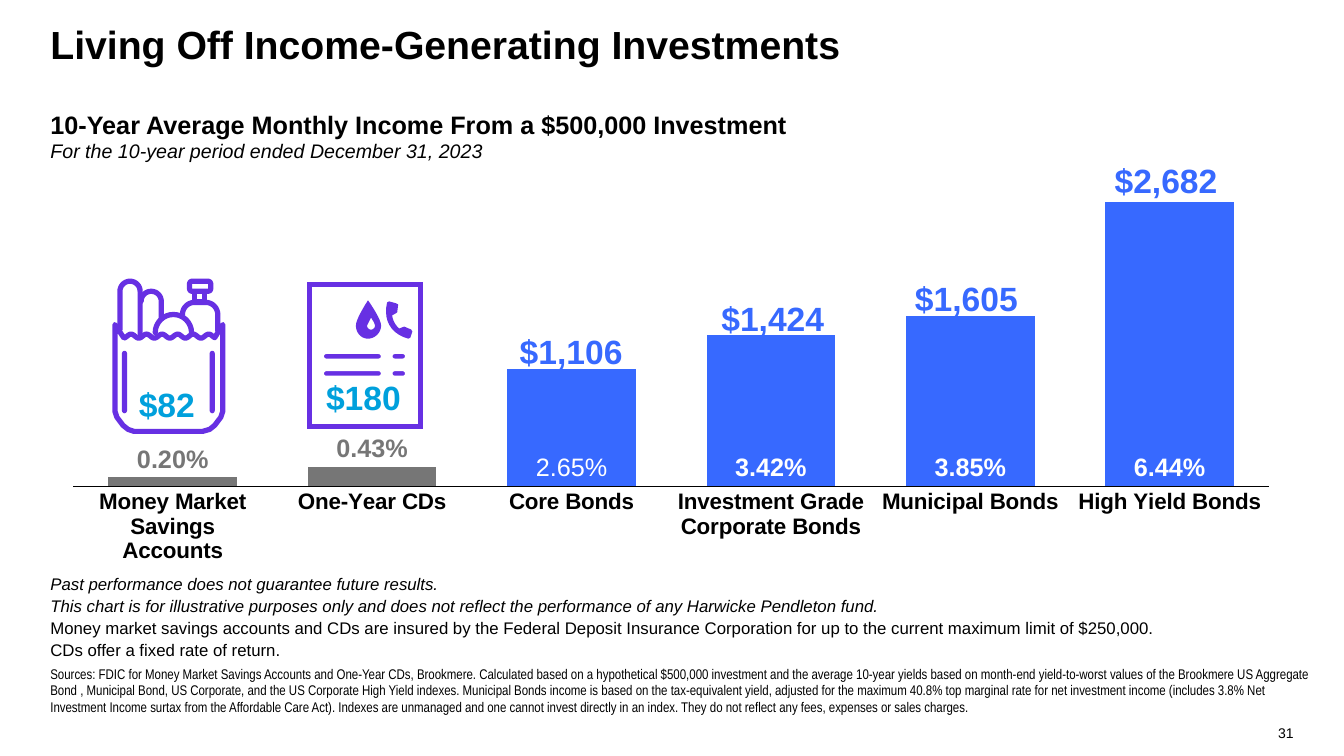
from math import cos, pi, radians, sin

from lxml import etree
from pptx import Presentation
from pptx.chart.data import CategoryChartData
from pptx.dml.color import RGBColor
from pptx.enum.chart import XL_CHART_TYPE, XL_LABEL_POSITION, XL_TICK_MARK
from pptx.enum.shapes import MSO_SHAPE
from pptx.enum.text import MSO_ANCHOR, MSO_AUTO_SIZE, PP_ALIGN
from pptx.oxml.ns import qn
from pptx.util import Inches, Pt

COLUMN = XL_CHART_TYPE.COLUMN_CLUSTERED
IN_BASE, OUT_END = XL_LABEL_POSITION.INSIDE_BASE, XL_LABEL_POSITION.OUTSIDE_END
NO_TICK = XL_TICK_MARK.NONE
RECT, ROUNDED = MSO_SHAPE.RECTANGLE, MSO_SHAPE.ROUNDED_RECTANGLE
TOP, BOTTOM = MSO_ANCHOR.TOP, MSO_ANCHOR.BOTTOM
LEFT, CENTER, RIGHT = PP_ALIGN.LEFT, PP_ALIGN.CENTER, PP_ALIGN.RIGHT


class Theme:
    font, narrow = "Arial", "Arial Narrow"
    black, white, gray = (RGBColor.from_string(c) for c in ("000000", "FFFFFF", "767676"))
    blue, cyan, purple = (RGBColor.from_string(c) for c in ("3769FF", "00A0DC", "6730E3"))
    title, income, heading, axis, period, note, small = 28, 24, 18, 16, 14, 12, 10


# Content
TITLE = "Living Off Income-Generating Investments"
HEADING = "10-Year Average Monthly Income From a $500,000 Investment"
PERIOD = "For the 10-year period ended December 31, 2023"
YIELDS = [
    ("Money Market Savings Accounts", 0.0020),
    ("One-Year CDs", 0.0043),
    ("Core Bonds", 0.0265),
    ("Investment Grade Corporate Bonds", 0.0342),
    ("Municipal Bonds", 0.0385),
    ("High Yield Bonds", 0.0644),
]
CASH_COUNT, REGULAR_LABEL = 2, 2
INCOMES = [  # text, left, top, width, colour
    ("$82", 1.17, 3.76, 0.97, Theme.cyan),
    ("$180", 3.09, 3.69, 1.03, Theme.cyan),
    ("$1,106", 5.05, 3.23, 1.23, Theme.blue),
    ("$1,424", 7.05, 2.91, 1.23, Theme.blue),
    ("$1,605", 8.97, 2.71, 1.23, Theme.blue),
    ("$2,682", 10.95, 1.54, 1.23, Theme.blue),
]
NOTES = [  # text, italic
    ("Past performance does not guarantee future results.", True),
    ("This chart is for illustrative purposes only and does not reflect the performance "
     "of any Harwicke Pendleton fund.", True),
    ("Money market savings accounts and CDs are insured by the Federal Deposit Insurance "
     "Corporation for up to the current maximum limit of $250,000.", False),
    ("CDs offer a fixed rate of return.", False),
]
SOURCES = (
    "Sources: FDIC for Money Market Savings Accounts and One-Year CDs, Brookmere. Calculated "
    "based on a hypothetical $500,000 investment and the average 10-year yields based on "
    "month-end yield-to-worst values of the Brookmere US Aggregate Bond , Municipal Bond, "
    "US Corporate, and the US Corporate High Yield indexes. Municipal Bonds income is based on "
    "the tax-equivalent yield, adjusted for the maximum 40.8% top marginal rate for net "
    "investment income (includes 3.8% Net Investment Income surtax from the Affordable Care "
    "Act). Indexes are unmanaged and one cannot invest directly in an index. They do not "
    "reflect any fees, expenses or sales charges."
)
PAGE = "31"


def style(font, size, color=Theme.black, bold=False, italic=False, name=Theme.font):
    font.name, font.size, font.bold, font.italic = name, Pt(size), bold, italic
    font.color.rgb = color


def write(shape, lines, anchor=TOP, align=LEFT, after=0, inset=0, wrap=True):
    """Each line is a text and the keywords of its font style."""
    tf = shape.text_frame
    tf.word_wrap, tf.vertical_anchor, tf.auto_size = wrap, anchor, MSO_AUTO_SIZE.NONE
    tf.margin_left = tf.margin_right = Inches(inset)
    tf.margin_top = tf.margin_bottom = Inches(inset / 2)
    for i, (text, look) in enumerate(lines):
        p = tf.paragraphs[0] if i == 0 else tf.add_paragraph()
        p.alignment, p.space_after = align, Pt(after)
        r = p.add_run()
        r.text = text
        style(r.font, **look)


def box(x, y, w, h, lines, **layout):
    tb = s.shapes.add_textbox(Inches(x), Inches(y), Inches(w), Inches(h))
    write(tb, lines, **layout)


def arc(cx, cy, radius, start, end, steps=16):
    angles = [radians(start + (end - start) * i / steps) for i in range(steps + 1)]
    return [(cx + radius * cos(a), cy - radius * sin(a)) for a in angles]


def curve(a, b, c, d, steps=10):
    ts = [i / steps for i in range(steps + 1)]
    return [tuple((1 - t) ** 3 * a[k] + 3 * (1 - t) ** 2 * t * b[k]
                  + 3 * (1 - t) * t ** 2 * c[k] + t ** 3 * d[k] for k in (0, 1)) for t in ts]


def outline(sp, width):
    sp.shadow.inherit = False
    sp.fill.background()
    sp.line.color.rgb, sp.line.width = Theme.purple, Pt(width)
    ln = sp._element.spPr.find(qn("a:ln"))
    ln.set("cap", "rnd")
    etree.SubElement(ln, qn("a:round"))


def solid(sp, edge=0):
    sp.shadow.inherit = False
    sp.fill.solid()
    sp.fill.fore_color.rgb = Theme.purple
    if edge:
        sp.line.color.rgb, sp.line.width = Theme.white, Pt(edge)
    else:
        sp.line.fill.background()


def freeform(group, *contours, close=True):
    contours = [[(Inches(x), Inches(y)) for x, y in points] for points in contours]
    fb = group.shapes.build_freeform(*contours[0][0])
    for i, points in enumerate(contours):
        if i:
            fb.move_to(*points[0])
        fb.add_line_segments(points[1:], close=close)
    return fb.convert_to_shape()


def preset(group, kind, x, y, w, h, corner=0.5):
    sp = group.shapes.add_shape(kind, Inches(x), Inches(y), Inches(w), Inches(h))
    if kind == ROUNDED:
        sp.adjustments[0] = corner
    return sp


prs = Presentation()
prs.slide_width, prs.slide_height = Inches(13.33), Inches(7.5)
s = prs.slides.add_slide(prs.slide_layouts[5])

# Title and heading
title = s.shapes.title
title.left, title.top, title.width, title.height = map(Inches, (0.5, 0.2, 9.5, 0.85))
write(title, [(TITLE, dict(size=Theme.title, bold=True))])
box(0.5, 1.08, 9.93, 0.74, [(HEADING, dict(size=Theme.heading, bold=True)),
                            (PERIOD, dict(size=Theme.period, italic=True))])

# Yield chart
data = CategoryChartData(number_format="0.00%")
data.categories = [name for name, _ in YIELDS]
data.add_series("Series 1", [value for _, value in YIELDS])
chart = s.shapes.add_chart(COLUMN, *map(Inches, (0.53, 1.57, 12.17, 4.01)), data).chart
chart.has_legend = chart.has_title = False
style(chart.font, Theme.small)
cat, val = chart.category_axis, chart.value_axis
cat.major_tick_mark = cat.minor_tick_mark = NO_TICK
cat.format.line.color.rgb, cat.format.line.width = Theme.black, Pt(0.75)
style(cat.tick_labels.font, Theme.axis, bold=True)
val.visible = val.has_major_gridlines = False
val.minimum_scale, val.maximum_scale = 0, 0.07

plot = chart.plots[0]
plot.gap_width, plot.overlap, plot.vary_by_categories = 55, 30, False
plot.has_data_labels = True
labels = plot.data_labels
labels.show_value, labels.position = True, IN_BASE
labels.number_format, labels.number_format_is_linked = "0.00%", False
style(labels.font, Theme.heading, Theme.white, bold=True)
series = plot.series[0]
series.format.fill.solid()
series.format.fill.fore_color.rgb = Theme.blue
for i in range(len(YIELDS)):
    cash, point = i < CASH_COUNT, series.points[i]
    if cash:
        point.format.fill.solid()
        point.format.fill.fore_color.rgb = Theme.gray
    style(point.data_label.font, Theme.heading, Theme.gray if cash else Theme.white,
          bold=i != REGULAR_LABEL)
    point.data_label.position = OUT_END if cash else IN_BASE

# Fixed plot area
area = chart._chartSpace.chart.plotArea
for old in area.findall(qn("c:layout")):
    area.remove(old)
layout = etree.Element(qn("c:layout"))
manual = etree.SubElement(layout, qn("c:manualLayout"))
for tag, value in (("layoutTarget", "inner"), ("xMode", "edge"), ("yMode", "edge"),
                   ("x", "0.016"), ("y", "0.047"), ("w", "0.975"), ("h", "0.766")):
    etree.SubElement(manual, qn(f"c:{tag}")).set("val", value)
area.insert(0, layout)

# Grocery bag icon
bag = s.shapes.add_group_shape()
wave = [(x / 100, 3.335 - 0.02 * cos(2 * pi * (x / 100 - 1.3) / 0.154)) for x in range(213, 122, -1)]
sack = [(1.14, 3.22), (1.14, 4.08), (1.16, 4.14), (1.22, 4.22), (1.27, 4.26), (1.33, 4.28),
        (2.01, 4.28), (2.08, 4.26), (2.13, 4.22), (2.19, 4.14), (2.21, 4.08), (2.21, 3.22)]
loaf = [(1.19, 3.27)] + arc(1.29, 2.89, 0.1, 180, 0) + [(1.39, 3.32)]
roll = arc(1.5, 2.99, 0.1, 180, 0) + [(1.6, 3.15)]
bread = arc(1.72, 3.3, 0.18, 180, 0)
bottle = arc(1.93, 3.12, 0.12, 180, 90) + arc(2.04, 3.12, 0.12, 90, 0) + [(2.16, 3.28)]
outline(freeform(bag, sack + wave), 3.75)
for item in (loaf, roll, bread, bottle):
    outline(freeform(bag, item, close=False), 3.75)
outline(preset(bag, RECT, 1.93, 2.89, 0.1, 0.1), 3.75)
outline(preset(bag, ROUNDED, 1.88, 2.79, 0.21, 0.1, 0.25), 3.75)
for x in (1.21, 2.08):
    solid(preset(bag, ROUNDED, x, 3.48, 0.05, 0.62))

# Utility bill icon
bill = s.shapes.add_group_shape()
for y in (3.5, 3.67):
    for x, w in ((3.2, 0.59), (3.88, 0.15)):
        solid(preset(bill, ROUNDED, x, y, w, 0.07), 1.75)
drop = (curve((3.65, 3.36), (3.72, 3.36), (3.78, 3.3), (3.78, 3.23))
        + curve((3.78, 3.23), (3.78, 3.16), (3.65, 2.98), (3.65, 2.98))
        + curve((3.65, 2.98), (3.65, 2.98), (3.53, 3.16), (3.53, 3.23))
        + curve((3.53, 3.23), (3.53, 3.3), (3.58, 3.36), (3.65, 3.36)))
hole = [(3.68, 3.15), (3.71, 3.2)] + arc(3.68, 3.23, 0.04, 0, -180) + [(3.66, 3.19)]
phone = (curve((3.89, 3.13), (3.9, 3.19), (3.92, 3.22), (3.96, 3.26))
         + [(4.01, 3.24), (4.08, 3.27), (4.09, 3.29), (4.07, 3.35), (4.05, 3.36)]
         + curve((4.05, 3.36), (3.87, 3.31), (3.8, 3.17), (3.84, 3))
         + [(3.86, 2.99), (3.93, 3.01), (3.95, 3.02), (3.94, 3.1)])
solid(freeform(bill, drop, hole))
solid(freeform(bill, phone))
frame = preset(bill, RECT, 3.07, 2.82, 1.1, 1.41)
outline(frame, 3.25)
frame.line._ln.remove(frame.line._ln.find(qn("a:round")))
etree.SubElement(frame.line._ln, qn("a:miter")).set("lim", "800000")

# Monthly incomes
for text, x, y, w, color in INCOMES:
    box(x, y, w, 0.5, [(text, dict(size=Theme.income, color=color, bold=True))],
        align=CENTER, inset=0.1, wrap=False)

# Notes, sources and page number
box(0.5, 5.66, 12.77, 0.89, [(text, dict(size=Theme.note, italic=it)) for text, it in NOTES],
    anchor=BOTTOM, after=1.5)
box(0.5, 6.6, 12.54, 0.5, [(SOURCES, dict(size=Theme.small, name=Theme.narrow))],
    anchor=BOTTOM, after=1.5)
box(12.43, 7.15, 0.4, 0.2, [(PAGE, dict(size=Theme.small))], anchor=BOTTOM, align=RIGHT)

prs.save("out.pptx")
